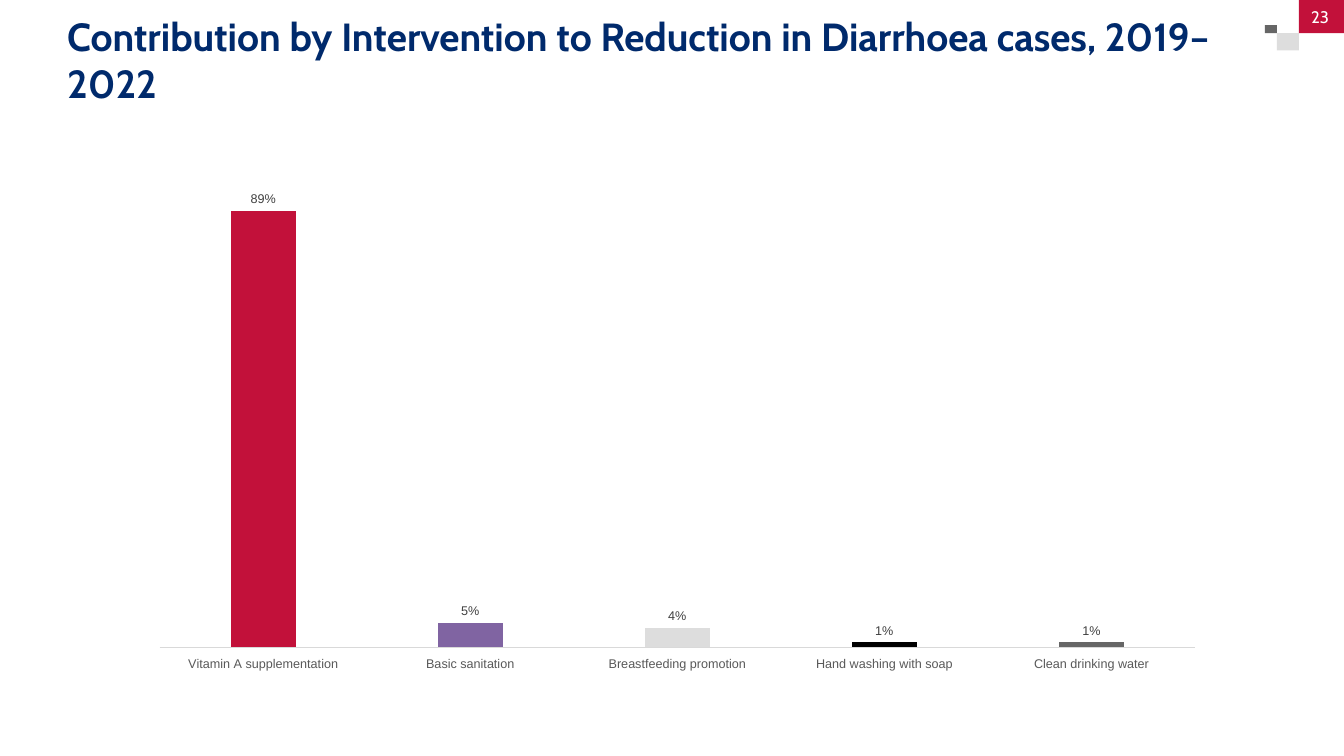
from lxml import etree
from pptx import Presentation
from pptx.chart.data import CategoryChartData
from pptx.dml.color import RGBColor
from pptx.enum.chart import XL_CHART_TYPE, XL_LABEL_POSITION, XL_TICK_LABEL_POSITION, XL_TICK_MARK
from pptx.enum.shapes import MSO_SHAPE
from pptx.enum.text import MSO_ANCHOR, MSO_AUTO_SIZE, PP_ALIGN
from pptx.oxml.ns import qn
from pptx.util import Pt

COLUMN = XL_CHART_TYPE.COLUMN_CLUSTERED
OUTSIDE_END = XL_LABEL_POSITION.OUTSIDE_END
LABELS_LOW = XL_TICK_LABEL_POSITION.LOW
NO_TICK = XL_TICK_MARK.NONE
RECTANGLE = MSO_SHAPE.RECTANGLE
MIDDLE = MSO_ANCHOR.MIDDLE
NO_AUTOFIT = MSO_AUTO_SIZE.NONE
LEFT, CENTER = PP_ALIGN.LEFT, PP_ALIGN.CENTER

COLORS = {
    "navy": "002A6C", "red": "C2113A", "purple": "8064A2", "light": "DDDDDD",
    "black": "000000", "gray": "666666", "white": "FFFFFF",
    "axis": "D9D9D9", "category": "595959", "label": "404040",
}
# Category, share of the reduction, column colour
INTERVENTIONS = [
    ("Vitamin A supplementation", 0.89, "red"),
    ("Basic sanitation", 0.05, "purple"),
    ("Breastfeeding promotion", 0.04, "light"),
    ("Hand washing with soap", 0.01, "black"),
    ("Clean drinking water", 0.01, "gray"),
]
# Plot area as fractions of the chart
PLOT_AREA = {"x": 0.02, "y": 0.015, "w": 0.96, "h": 0.928}


def rgb(name):
    return RGBColor.from_string(COLORS[name])


def format_font(font, size, color, name="Arial", bold=False):
    font.size = Pt(size)
    font.name = name
    font.bold = bold
    font.color.rgb = rgb(color)


def write_text(shape, text, align=LEFT, **font_format):
    frame = shape.text_frame
    frame.word_wrap = True
    frame.auto_size = NO_AUTOFIT
    frame.vertical_anchor = MIDDLE
    frame.margin_left = frame.margin_right = frame.margin_top = frame.margin_bottom = 0
    paragraph = frame.paragraphs[0]
    paragraph.alignment = align
    run = paragraph.add_run()
    run.text = text
    format_font(run.font, **font_format)


def add_title(slide, left, top, width, height):
    title = slide.shapes.title
    title.left, title.top, title.width, title.height = map(Pt, (left, top, width, height))
    write_text(title, "Contribution by Intervention to Reduction in Diarrhoea cases, 2019–2022",
               size=28, color="navy", name="Cabin", bold=True)


def add_page_corner(slide, left, top, width, height):
    # Stepped blocks: offset and size as fractions of the box
    blocks = [
        ("gray", 0, 0.5, 0.15, 0.16),
        ("light", 0.15, 0.66, 0.28, 0.34),
        ("red", 0.43, 0, 0.57, 0.66),
    ]
    for color, x, y, block_width, block_height in blocks:
        block = slide.shapes.add_shape(
            RECTANGLE, Pt(left + x * width), Pt(top + y * height),
            Pt(block_width * width), Pt(block_height * height))
        block.shadow.inherit = False
        block.fill.solid()
        block.fill.fore_color.rgb = rgb(color)
        block.line.fill.background()
    # The last block carries the page number
    write_text(block, "23", align=CENTER, size=12, color="white", name="Cabin")
    block.text_frame.margin_right = Pt(2)


def set_plot_area(chart):
    plot_area = chart.plots[0]._element.getparent()
    for layout in plot_area.findall(qn("c:layout")):
        plot_area.remove(layout)
    layout = etree.Element(qn("c:layout"))
    manual = etree.SubElement(layout, qn("c:manualLayout"))
    settings = {"layoutTarget": "inner", "xMode": "edge", "yMode": "edge", **PLOT_AREA}
    for tag, value in settings.items():
        etree.SubElement(manual, qn(f"c:{tag}")).set("val", str(value))
    plot_area.insert(0, layout)


def add_intervention_chart(slide, left, top, width, height):
    data = CategoryChartData(number_format="0%")
    data.categories = [category for category, _, _ in INTERVENTIONS]
    data.add_series("Series 1", [share for _, share, _ in INTERVENTIONS])
    chart = slide.shapes.add_chart(COLUMN, Pt(left), Pt(top), Pt(width), Pt(height), data).chart
    chart.has_legend = False
    chart.has_title = False
    format_font(chart.font, size=10, color="black")
    set_plot_area(chart)

    # Axes
    category_axis = chart.category_axis
    category_axis.major_tick_mark = NO_TICK
    category_axis.tick_label_position = LABELS_LOW
    category_axis.format.line.color.rgb = rgb("axis")
    category_axis.format.line.width = Pt(0.75)
    format_font(category_axis.tick_labels.font, size=9, color="category")
    value_axis = chart.value_axis
    value_axis.minimum_scale, value_axis.maximum_scale = 0, 1
    value_axis.has_major_gridlines = False
    value_axis.tick_labels.number_format = "0%"
    value_axis.tick_labels.number_format_is_linked = False
    value_axis.visible = False

    # Columns and their labels
    plot = chart.plots[0]
    plot.gap_width, plot.overlap = 219, -27
    plot.vary_by_categories = False
    series = plot.series[0]
    series.invert_if_negative = False
    series.format.fill.solid()
    series.format.fill.fore_color.rgb = rgb("gray")
    for index, (_, _, color) in enumerate(INTERVENTIONS):
        fill = series.points[index].format.fill
        fill.solid()
        fill.fore_color.rgb = rgb(color)
    labels = series.data_labels
    labels.show_value = True
    labels.position = OUTSIDE_END
    labels.number_format = "0%"
    labels.number_format_is_linked = False
    format_font(labels.font, size=9, color="label")


def main():
    presentation = Presentation()
    presentation.slide_width, presentation.slide_height = Pt(960), Pt(540)
    slide = presentation.slides.add_slide(presentation.slide_layouts[5])
    add_page_corner(slide, 903.6, 0, 56.4, 36)
    add_title(slide, 48, 14.4, 856, 56)
    add_intervention_chart(slide, 98.6, 106.6, 770.4, 377.3)
    presentation.save("out.pptx")


if __name__ == "__main__":
    main()
